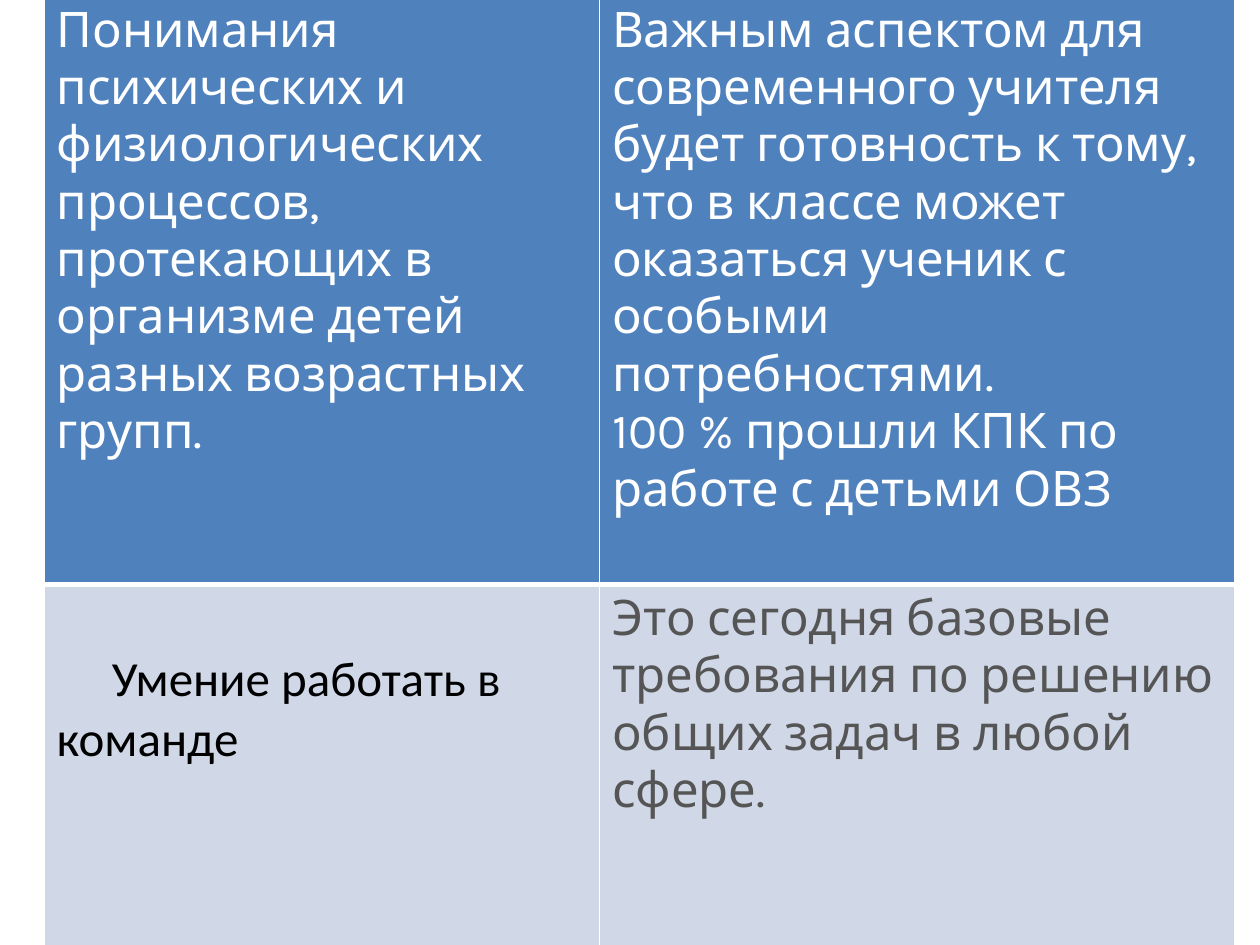
import pptx
import pptx.dml.color
import pptx.oxml
import pptx.oxml.ns
import pptx.util

Cm, Pt = pptx.util.Cm, pptx.util.Pt

# Content: each cell is a list of paragraphs
ROWS = [
    [
        ["Понимания психических и физиологических процессов, "
         "протекающих в организме детей разных возрастных групп."],
        ["Важным аспектом для современного учителя будет готовность к тому, "
         "что в классе может оказаться ученик с особыми потребностями.",
         "100 % прошли КПК по работе с детьми ОВЗ"],
    ],
    [
        ["Умение работать в команде"],
        ["Это сегодня базовые требования по решению общих задач в любой сфере."],
    ],
]
FILLS = ["4F81BD", "D0D8E8"]
FONTS = [
    [("Karla", "FFFFFF"), ("Karla", "FFFFFF")],
    [("Calibri", "000000"), ("Karla", "555555")],
]
COL_WIDTHS = [11.2, 12.8]
ROW_HEIGHTS = [11.86, 16.76]
LEFT, TOP = 0.89, -0.08
HEADER_RULE, THIN_RULE = 3, 1


def rgb(color):
    return pptx.dml.color.RGBColor.from_string(color)


def add_borders(cell, top, bottom):
    tc_pr = cell._tc.get_or_add_tcPr()
    sides = {"lnL": THIN_RULE, "lnR": THIN_RULE, "lnT": top, "lnB": bottom}
    for side, width in sides.items():
        tc_pr.append(pptx.oxml.parse_xml(
            f'<a:{side} {pptx.oxml.ns.nsdecls("a")} w="{Pt(width)}">'
            '<a:solidFill><a:srgbClr val="FFFFFF"/></a:solidFill>'
            f'</a:{side}>'))


def fill_cell(cell, texts, font, color):
    tf = cell.text_frame
    for i, text in enumerate(texts):
        p = tf.add_paragraph() if i else tf.paragraphs[0]
        r = p.add_run()
        r.text = text
        r.font.name = font
        r.font.size = Pt(28)
        r.font.bold = False
        r.font.color.rgb = rgb(color)


prs = pptx.Presentation()
prs.slide_width, prs.slide_height = Cm(25.4), Cm(19.05)
s = prs.slides.add_slide(prs.slide_layouts[6])

# Table grid
table = s.shapes.add_table(
    len(ROW_HEIGHTS), len(COL_WIDTHS), Cm(LEFT), Cm(TOP),
    Cm(sum(COL_WIDTHS)), Cm(sum(ROW_HEIGHTS))).table
table.horz_banding = False
for column, width in zip(table.columns, COL_WIDTHS):
    column.width = Cm(width)
for row, height in zip(table.rows, ROW_HEIGHTS):
    row.height = Cm(height)

# Cells
for y, row in enumerate(ROWS):
    for x, texts in enumerate(row):
        cell = table.cell(y, x)
        top, bottom = (HEADER_RULE, THIN_RULE) if y else (THIN_RULE, HEADER_RULE)
        add_borders(cell, top, bottom)
        cell.fill.solid()
        cell.fill.fore_color.rgb = rgb(FILLS[y])
        fill_cell(cell, texts, *FONTS[y][x])

# The teamwork cell starts one line lower, with an indented first line
teamwork = table.cell(1, 0)
teamwork.margin_top = Cm(1.32)
p_pr = teamwork.text_frame.paragraphs[0]._p.get_or_add_pPr()
p_pr.set("indent", str(Cm(1.11)))

prs.save("out.pptx")
